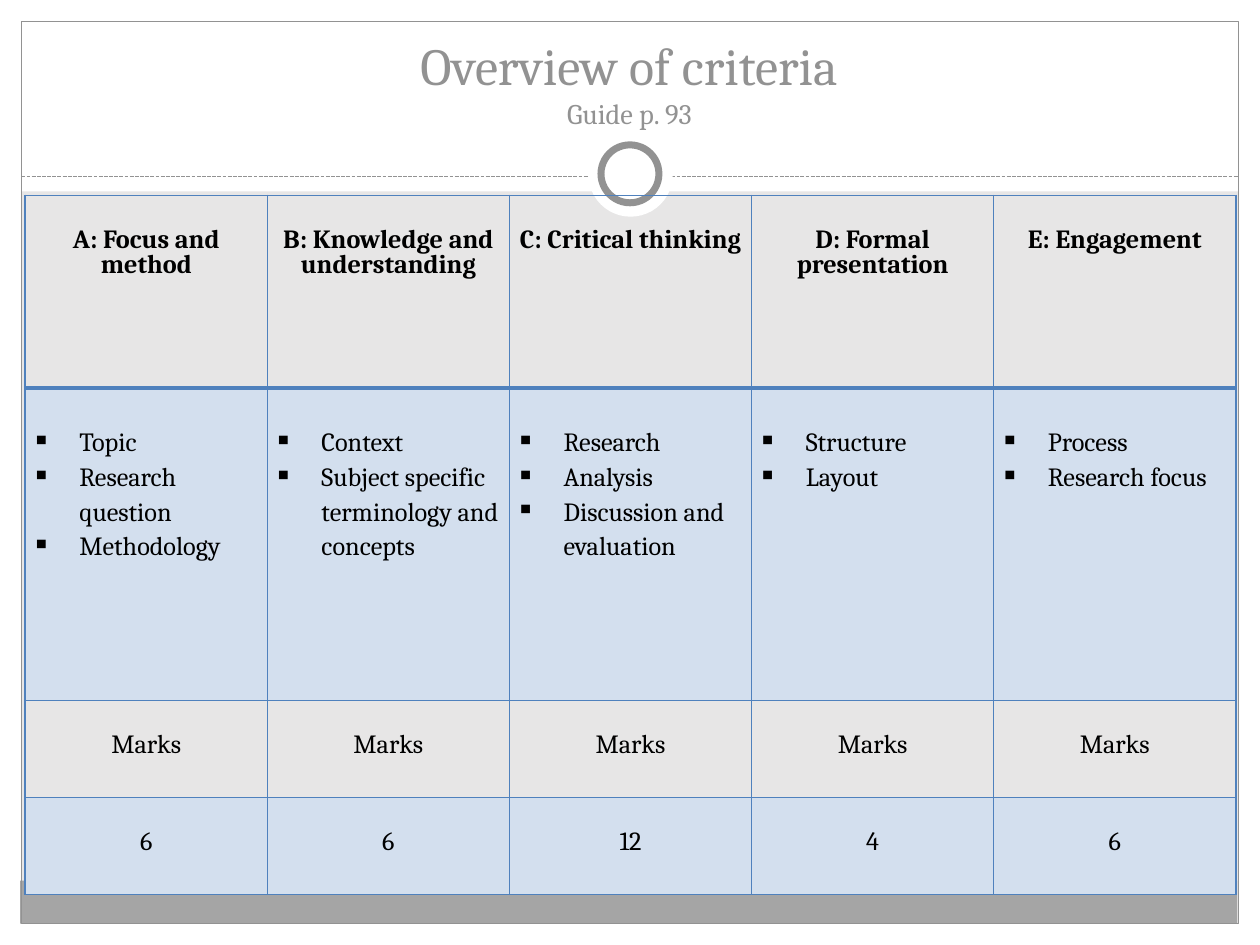
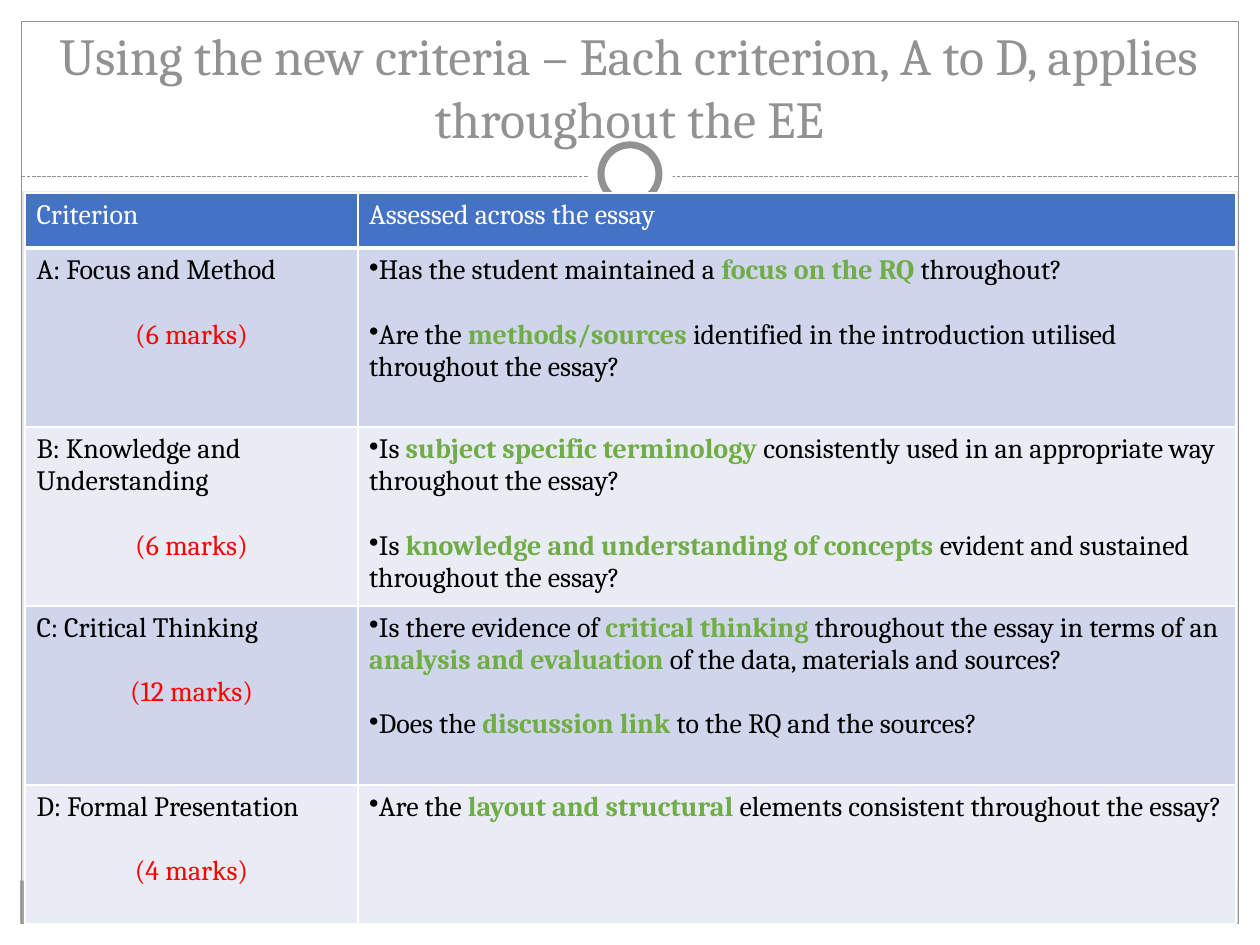
from lxml.etree import SubElement
from pptx import Presentation
from pptx.dml.color import RGBColor
from pptx.enum.dml import MSO_LINE
from pptx.enum.shapes import MSO_CONNECTOR, MSO_SHAPE
from pptx.enum.text import MSO_ANCHOR, MSO_AUTO_SIZE, PP_ALIGN
from pptx.oxml.ns import qn
from pptx.util import Inches, Pt

# Content
OVERVIEW = [
    ("A: Focus and method", ["Topic", "Research question", "Methodology"], "6"),
    ("B: Knowledge and understanding",
     ["Context", "Subject specific terminology and concepts"], "6"),
    ("C: Critical thinking", ["Research", "Analysis", "Discussion and evaluation"], "12"),
    ("D: Formal presentation", ["Structure", "Layout"], "4"),
    ("E: Engagement", ["Process", "Research focus"], "6"),
]
HEADS = ("Criterion", "Assessed across the essay")
# Words between asterisks are highlighted
CHECKS = [
    ("A: Focus and Method", "(6 marks)", [
        "Has the student maintained a *focus on the RQ *throughout?",
        "Are the *methods/sources *identified in the introduction utilised "
        "throughout the essay?"]),
    ("B: Knowledge and Understanding", "(6 marks)", [
        "Is *subject specific terminology *consistently used in an appropriate way "
        "throughout the essay?",
        "Is *knowledge and understanding of concepts *evident and sustained "
        "throughout the essay?"]),
    ("C: Critical Thinking", "(12 marks)", [
        "Is there evidence of *critical thinking *throughout the essay in terms of an "
        "*analysis and evaluation *of the data, materials and sources?",
        "Does the *discussion link *to the RQ and the sources?"]),
    ("D: Formal Presentation", "(4 marks)", [
        "Are the *layout and structural *elements consistent throughout the essay?"]),
]

# Shared look
FACE = "Cambria"
WHITE, BLACK, GRAY, PAPER, BAND = "FFFFFF", "000000", "929292", "E7E6E6", "A5A5A5"
EDGE, PALE = "4F81BD", "D3DFEE"
HEAD, STRIPES = "4472C4", ("CFD5EA", "E9EBF5")
RED, GREEN = "FF0000", "70AD47"
FRAME = [  # preset, left, top, width, height, fill, line colour, line points
    (MSO_SHAPE.RECTANGLE, 0, 7.33, 10, 0.17, WHITE, None, 0),
    (MSO_SHAPE.RECTANGLE, 0, 0, 10, 1.52, WHITE, None, 0),
    (MSO_SHAPE.RECTANGLE, 0, 0, 0.17, 7.5, WHITE, None, 0),
    (MSO_SHAPE.RECTANGLE, 9.83, 0, 0.17, 7.5, WHITE, None, 0),
    (MSO_SHAPE.RECTANGLE, 0.16, 6.99, 9.66, 0.34, BAND, None, 0),
    (MSO_SHAPE.RECTANGLE, 0.17, 0.17, 9.66, 7.16, None, GRAY, 0.75),
]
RING = [
    (MSO_SHAPE.OVAL, 4.67, 1.05, 0.67, 0.67, WHITE, None, 0),
    (MSO_SHAPE.OVAL, 4.77, 1.15, 0.46, 0.46, WHITE, GRAY, 4),
]


def color(code):
    return RGBColor.from_string(code)


def paint(fill, code):
    if code:
        fill.solid()
        fill.fore_color.rgb = color(code)
    else:
        fill.background()


def draw(slide, parts):
    for kind, x, y, w, h, fill, edge, width in parts:
        shape = slide.shapes.add_shape(kind, Inches(x), Inches(y), Inches(w), Inches(h))
        shape.shadow.inherit = False
        paint(shape.fill, fill)
        paint(shape.line.fill, edge)
        if edge:
            shape.line.width = Pt(width)


def start(deck, lines, height):
    """Add a slide with the frame, the ring and a title of (text, size) lines."""
    slide = deck.slides.add_slide(deck.slide_layouts[5])
    draw(slide, FRAME)
    rule = slide.shapes.add_connector(
        MSO_CONNECTOR.STRAIGHT, Inches(0.17), Inches(1.4), Inches(9.83), Inches(1.4))
    rule.line.color.rgb = color(GRAY)
    rule.line.width = Pt(0.75)
    rule.line.dash_style = MSO_LINE.SQUARE_DOT
    SubElement(rule._element.spPr, qn("a:effectLst"))
    draw(slide, RING)

    title = slide.shapes.title
    slide.shapes._spTree.append(title._element)  # in front of the frame
    title.left, title.top = Inches(0.33), Inches(0.25)
    title.width, title.height = Inches(9.33), Inches(height)
    frame = title.text_frame
    frame.auto_size = MSO_AUTO_SIZE.NONE
    frame.vertical_anchor = MSO_ANCHOR.BOTTOM
    para = frame.paragraphs[0]
    para.alignment = PP_ALIGN.CENTER
    para.font.name = FACE
    para.font.color.rgb = color(GRAY)
    for i, (text, size) in enumerate(lines):
        if i:
            para.add_line_break()
        run = para.add_run()
        run.text = text
        run.font.size = Pt(size)
    return slide


def grid(slide, top, cols, rows):
    box = slide.shapes.add_table(len(rows), len(cols), Inches(0.2), Inches(top),
                                 Inches(sum(cols)), Inches(sum(rows)))
    table = box.table
    table.first_row = table.horz_banding = False
    for col, width in zip(table.columns, cols):
        col.width = Inches(width)
    for row, height in zip(table.rows, rows):
        row.height = Inches(height)
    return table


def style(cell, fill, edge, pad, top=1, bottom=1):
    """Set fill, borders and the (side, top, bottom) margins of a cell."""
    cell.margin_left = cell.margin_right = Inches(pad[0])
    cell.margin_top, cell.margin_bottom = Inches(pad[1]), Inches(pad[2])
    paint(cell.fill, fill)
    props = cell._tc.get_or_add_tcPr()
    for i, (side, width) in enumerate(zip("LRTB", (1, 1, top, bottom))):
        line = SubElement(props, qn("a:ln" + side), w=str(Pt(width)))
        ink = SubElement(line, qn("a:solidFill"))
        SubElement(ink, qn("a:srgbClr"), val=edge)
        props.insert(i, line)


def write(cell, texts, size, ink=BLACK, bold=False, mark=None, indent=0,
          align=PP_ALIGN.LEFT, space=None, gap=0):
    """Write one paragraph per text, with gap points between them."""
    frame = cell.text_frame
    for i, text in enumerate(texts):
        para = frame.add_paragraph() if i else frame.paragraphs[0]
        para.alignment = align
        if mark:
            props = para._p.get_or_add_pPr()
            props.set("marL", str(Inches(indent)))
            props.set("indent", str(-Inches(indent)))
            SubElement(props, qn("a:buChar"), char=mark)
        if space:
            para.line_spacing = space
        if i and gap:
            para.space_before = Pt(gap)
        para.font.name, para.font.size = FACE, Pt(size)
        for j, part in enumerate(text.split("*")):
            run = para.add_run()
            run.text = part
            run.font.bold = bold or j % 2 == 1
            run.font.color.rgb = color(GREEN if j % 2 else ink)


def overview(deck):
    slide = start(deck, [("Overview of criteria", 29.7), ("Guide p. 93", 16.2)], 0.83)
    table = grid(slide, 1.55, [9.61 / 5] * 5, [1.53, 2.48, 0.77, 0.77])
    pad = (0.05, 0.28, 0)
    mid = dict(size=15, align=PP_ALIGN.CENTER, space=Pt(14))
    for c, (name, topics, marks) in enumerate(OVERVIEW):
        head, body, label, score = (table.cell(r, c) for r in range(4))
        style(head, None, EDGE, pad, bottom=2.25)
        write(head, [name], bold=True, **mid)
        style(body, PALE, EDGE, pad, top=2.25)
        write(body, topics, 15, mark="▪", indent=0.38, space=1.15)
        style(label, None, EDGE, pad)
        write(label, ["Marks"], **mid)
        style(score, PALE, EDGE, pad)
        write(score, [marks], **mid)


def checks(deck):
    text = "Using the new criteria – Each criterion, A to D, applies throughout the EE"
    slide = start(deck, [(text, 29.7)], 0.98)
    table = grid(slide, 1.53, [2.64, 6.97], [0.44, 1.42, 1.42, 1.42, 1.1])
    pad = (0.09, 0.05, 0.05)
    for c, name in enumerate(HEADS):
        style(table.cell(0, c), HEAD, WHITE, pad, bottom=3)
        write(table.cell(0, c), [name], 16, WHITE)
    for r, (name, marks, asks) in enumerate(CHECKS, 1):
        left, right = table.cell(r, 0), table.cell(r, 1)
        for cell in (left, right):
            style(cell, STRIPES[(r - 1) % 2], WHITE, pad, top=3 if r == 1 else 1)
        write(left, [name, marks], 16, gap=18.4)
        last = left.text_frame.paragraphs[1]
        last.alignment = PP_ALIGN.CENTER
        last.runs[0].font.color.rgb = color(RED)
        write(right, asks, 16, mark="•", gap=18.4)


def main():
    deck = Presentation()
    deck.slide_width, deck.slide_height = Inches(10), Inches(7.5)
    paint(deck.slide_master.background.fill, PAPER)
    overview(deck)
    checks(deck)
    deck.save("out.pptx")


if __name__ == "__main__":
    main()
